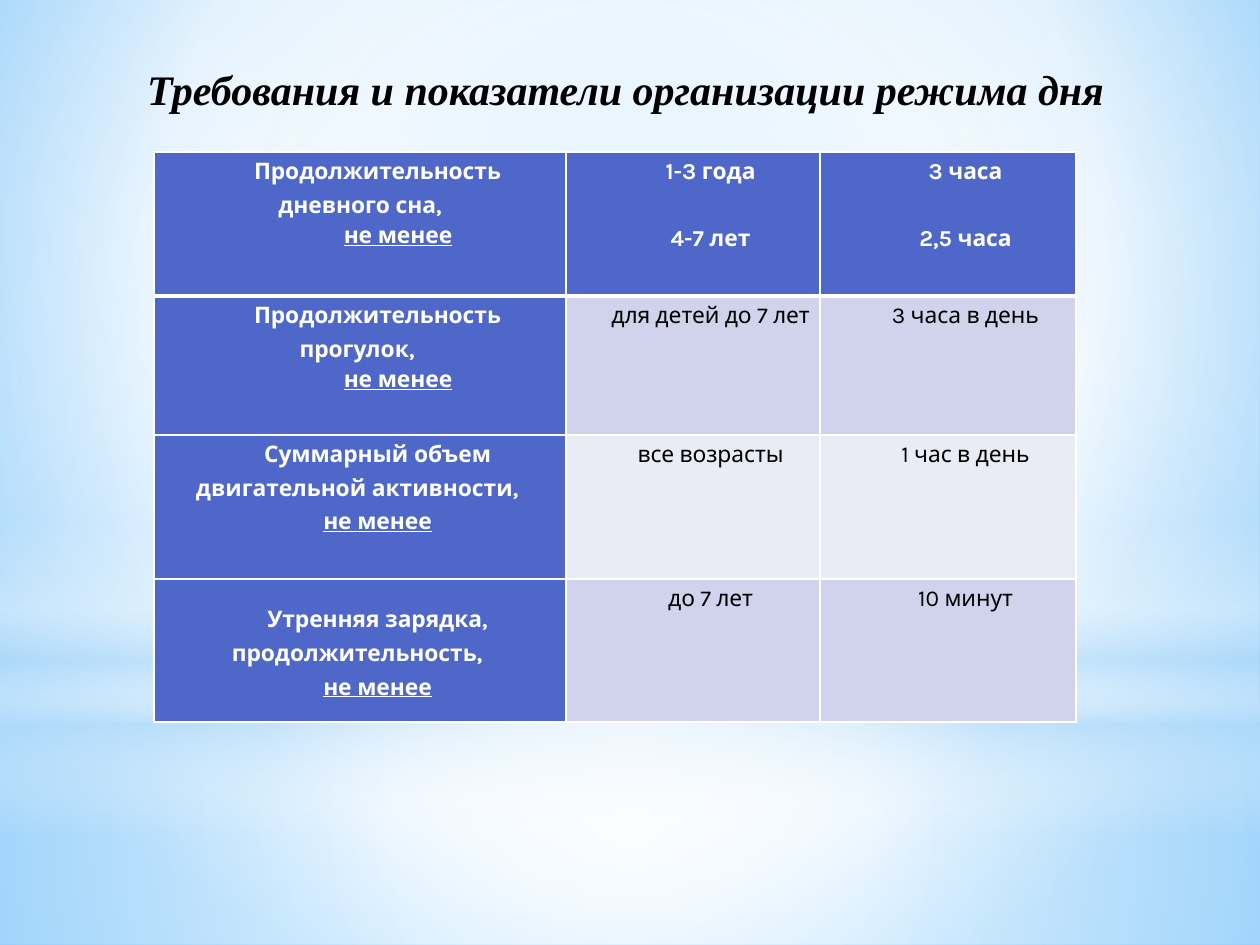
from dataclasses import dataclass

from pptx import Presentation
from pptx import util as u
from pptx.dml.color import RGBColor
from pptx.enum import shapes, text
from pptx.oxml import parse_xml
from pptx.oxml.ns import nsdecls


@dataclass(frozen=True)
class Theme:
    title_font: str = "Times New Roman"
    body_font: str = "Karla"
    title_size: int = 24
    body_size: int = 13
    white: str = "FFFFFF"
    black: str = "000000"
    accent: str = "4E67C8"
    band_dark: str = "D0D3EB"
    band_light: str = "E9EBF5"
    glow: str = "B4DCFA"
    sky: str = "9ED5FF"
    deep_sky: str = "5BB9FF"


THEME = Theme()
SLIDE = (0, 0, 1260, 945)
CENTER = (50, 50, 50, 50)


def px(length):
    return u.Inches(length / 126)


def write(frame, line, first=False, size=THEME.body_size, font=THEME.body_font,
          color=THEME.white, bold=False, italic=False, underline=False,
          spacing=None, before=0, margin=0, indent=0):
    paragraph = frame.paragraphs[0] if first else frame.add_paragraph()
    paragraph.alignment = text.PP_ALIGN.CENTER
    paragraph.line_spacing = spacing
    paragraph.space_before = u.Pt(before)
    properties = paragraph._p.get_or_add_pPr()
    properties.set("marL", str(px(margin)))
    properties.set("indent", str(px(indent)))
    run = paragraph.add_run()
    run.text = line
    run.font.name = font
    run.font.size = u.Pt(size)
    run.font.bold = bold
    run.font.italic = italic
    run.font.underline = underline
    run.font.color.rgb = RGBColor.from_string(color)


def paint_gradient(fill, element, stops, focus=None):
    fill.background()
    stop_xml = "".join(
        f'<a:gs pos="{position * 1000}"><a:srgbClr val="{color}">'
        f'<a:alpha val="{alpha * 1000}"/></a:srgbClr></a:gs>'
        for position, color, alpha in stops)
    if focus:
        sides = " ".join(f'{side}="{value * 1000}"' for side, value in zip("ltrb", focus))
        direction = f'<a:path path="circle"><a:fillToRect {sides}/></a:path>'
    else:
        direction = '<a:lin ang="5400000" scaled="0"/>'
    gradient = parse_xml(
        f'<a:gradFill {nsdecls("a")} rotWithShape="1"><a:gsLst>{stop_xml}</a:gsLst>'
        f'{direction}</a:gradFill>')
    empty = element.xpath(".//a:noFill")[0]
    empty.getparent().replace(empty, gradient)


def add_backdrop(slide, box):
    left, top, width, height = box
    white, glow = THEME.white, THEME.glow
    paint_gradient(slide.background.fill, slide._element,
                   [(0, THEME.sky, 100), (60, white, 100), (100, THEME.deep_sky, 100)],
                   (20, 10, 20, 60))
    rectangle, oval = shapes.MSO_SHAPE.RECTANGLE, shapes.MSO_SHAPE.OVAL
    layers = [
        (rectangle, 703, height - 703, CENTER,
         [(0, white, 91), (37, white, 76), (100, glow, 79)]),
        (rectangle, 0, 703, CENTER,
         [(0, white, 89), (48, white, 62), (100, glow, 79)]),
        (rectangle, 519, 315, None,
         [(0, white, 0), (29, white, 30), (45, glow, 40),
          (55, white, 26), (65, glow, 60), (100, white, 0)]),
        (oval, 220, 703, CENTER, [(0, white, 100), (56, white, 0)]),
    ]
    for kind, offset, depth, focus, stops in layers:
        layer = slide.shapes.add_shape(kind, px(left), px(top + offset), px(width), px(depth))
        layer.shadow.inherit = False
        paint_gradient(layer.fill, layer._element, stops, focus)
        layer.line.fill.background()


def add_title(slide, box):
    title = slide.shapes.title
    title.left, title.top, title.width, title.height = map(px, box)
    slide.shapes._spTree.append(title._element)
    frame = title.text_frame
    frame.word_wrap = True
    frame.auto_size = text.MSO_AUTO_SIZE.NONE
    frame.vertical_anchor = text.MSO_ANCHOR.TOP
    write(frame, "Требования и показатели организации режима дня", first=True,
          size=THEME.title_size, font=THEME.title_font, color=THEME.black,
          bold=True, italic=True)


def border_cell(cell, top, bottom):
    properties = cell._tc.get_or_add_tcPr()
    for index, (side, weight) in enumerate(zip("LRTB", (1, 1, top, bottom))):
        properties.insert(index, parse_xml(
            f'<a:ln{side} {nsdecls("a")} w="{u.Pt(weight)}"><a:solidFill>'
            f'<a:srgbClr val="{THEME.white}"/></a:solidFill></a:ln{side}>'))


def add_schedule(slide, box):
    widths = (412, 254, 256)
    heights = (144, 139, 144, 143)
    body = dict(spacing=1.27, indent=35)
    shifted = dict(spacing=1.15, margin=14, indent=62)
    rows = [
        ("Продолжительность дневного сна,", shifted,
         ["1-3 года", "4-7 лет"], ["3 часа", "2,5 часа"], (0, 0)),
        ("Продолжительность прогулок, ", shifted,
         ["для детей до 7 лет"], ["3 часа в день"], (6, 5)),
        ("Суммарный объем двигательной активности, ", body,
         ["все возрасты"], ["1 час в день"], (0, 0)),
        ("Утренняя зарядка, продолжительность, ", body,
         ["до 7 лет"], ["10 минут"], (0, 0)),
    ]
    bands = (THEME.accent, THEME.band_dark, THEME.band_light, THEME.band_dark)
    table = slide.shapes.add_table(len(rows), len(widths), *map(px, box)).table
    for column, width in zip(table.columns, widths):
        column.width = px(width)
    for row, height in zip(table.rows, heights):
        row.height = px(height)

    for number, (requirement, minimum, ages, norms, gaps) in enumerate(rows):
        heading = number == 0
        for position in range(len(widths)):
            cell = table.cell(number, position)
            cell.margin_left = cell.margin_right = px(9)
            cell.margin_top = cell.margin_bottom = 0
            cell.fill.solid()
            color = bands[number] if position else THEME.accent
            cell.fill.fore_color.rgb = RGBColor.from_string(color)
            border_cell(cell, 3 if number == 1 else 1, 3 if heading else 1)
            if position == 0:
                write(cell.text_frame, requirement, first=True, bold=True, **body)
                write(cell.text_frame, "не менее", bold=True, underline=True, **minimum)
                continue
            for order, value in enumerate((ages, norms)[position - 1]):
                write(cell.text_frame, value, first=order == 0, bold=heading,
                      color=THEME.white if heading else THEME.black,
                      before=19 if order else gaps[position - 1], **body)
    table.cell(len(rows) - 1, 0).vertical_anchor = text.MSO_ANCHOR.MIDDLE


def main():
    deck = Presentation()
    deck.slide_width, deck.slide_height = map(px, SLIDE[2:])
    slide = deck.slides.add_slide(deck.slide_layouts[5])
    add_backdrop(slide, SLIDE)
    add_title(slide, (25, 57, 1201, 80))
    add_schedule(slide, (154, 152, 922, 570))
    deck.save("out.pptx")


if __name__ == "__main__":
    main()
